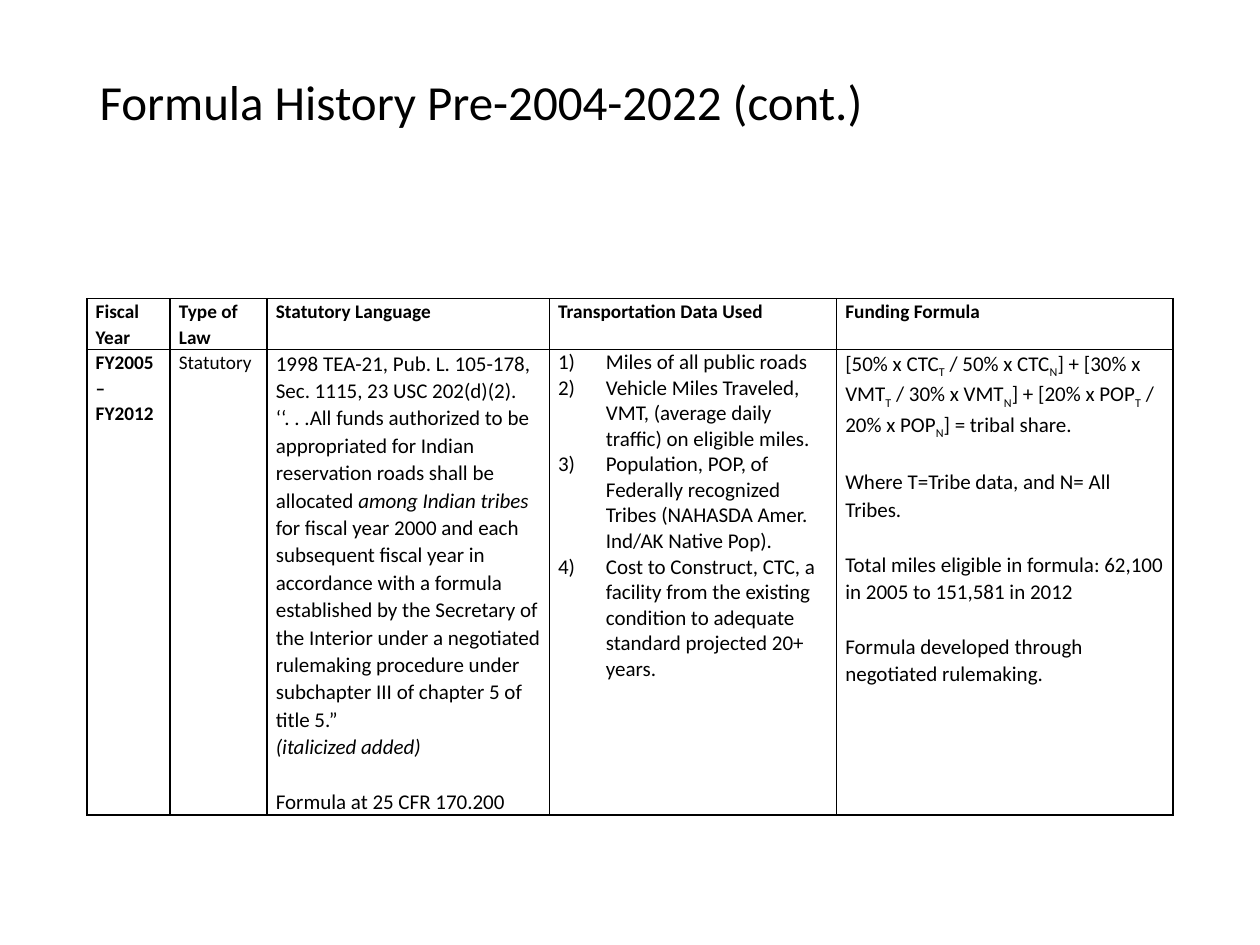
"""Build the slide on formula history with its statutory table."""
from lxml import etree
from pptx import Presentation
from pptx.dml.color import RGBColor
from pptx.enum.text import MSO_ANCHOR, MSO_AUTO_SIZE, PP_ALIGN
from pptx.oxml.ns import qn
from pptx.util import Inches, Pt

BLACK = "000000"
HEADERS = ["Fiscal Year", "Type of Law", "Statutory Language",
           "Transportation Data Used", "Funding Formula"]
COLUMN_WIDTHS = [0.66, 0.77, 2.24, 2.28, 2.67]
ROW_HEIGHTS = [0.37, 3.49]
STATUTE = [
    "1998 TEA-21, Pub. L. 105-178, Sec. 1115, 23 USC 202(d)(2).",
    "‘‘. . .All funds authorized to be appropriated for Indian reservation "
    "roads shall be allocated *among Indian tribes* for fiscal year 2000 and "
    "each subsequent fiscal year in accordance with a formula established by "
    "the Secretary of the Interior under a negotiated rulemaking procedure "
    "under subchapter III of chapter 5 of title 5.”",
    "*(italicized added)*",
    "Formula at 25 CFR 170.200",
]
DATA_USED = [
    "Miles of all public roads",
    "Vehicle Miles Traveled, VMT, (average daily traffic) on eligible miles.",
    "Population, POP, of Federally recognized Tribes (NAHASDA Amer. Ind/AK "
    "Native Pop).",
    "Cost to Construct, CTC, a facility from the existing condition to "
    "adequate standard projected 20+ years.",
]
FORMULA = [
    "[50% x CTC_T_ / 50% x CTC_N_] + [30% x VMT_T_ / 30% x VMT_N_] + "
    "[20% x POP_T_ / 20% x POP_N_] = tribal share.",
    "Where T=Tribe data, and N= All Tribes.",
    "Total miles eligible in formula: 62,100 in 2005 to 151,581 in 2012",
    "Formula developed through negotiated rulemaking.",
]
BODY = [["FY2005 – FY2012"], ["Statutory"], STATUTE, DATA_USED, FORMULA]
GAP_BEFORE = {STATUTE[-1], *FORMULA[1:]}


def style_font(font, size, color, bold=False):
    """Apply the slide typeface with a size, colour and weight."""
    font.name = "Calibri"
    font.size = Pt(size)
    font.bold = bold
    font.color.rgb = RGBColor.from_string(color)


def add_marked_runs(paragraph, text, size, bold):
    """Add runs, with *...* as italic and _..._ as subscript."""
    marker = "*" if "*" in text else "_"
    for index, part in enumerate(text.split(marker)):
        if not part:
            continue
        run = paragraph.add_run()
        run.text = part
        style_font(run.font, size, BLACK, bold)
        if index % 2 and marker == "*":
            run.font.italic = True
        elif index % 2:
            run.font._element.set("baseline", "-25000")


presentation = Presentation()
presentation.slide_width = Inches(10)
presentation.slide_height = Inches(7.5)
slide = presentation.slides.add_slide(presentation.slide_layouts[5])

title = slide.shapes.title
title.left, title.top = Inches(0.69), Inches(0.4)
title.width, title.height = Inches(8.62), Inches(0.86)
title.text_frame.text = "Formula History Pre-2004-2022 (cont.)"
title.text_frame.auto_size = MSO_AUTO_SIZE.NONE
title.text_frame.vertical_anchor = MSO_ANCHOR.MIDDLE
paragraph = title.text_frame.paragraphs[0]
paragraph.alignment = PP_ALIGN.LEFT
paragraph.line_spacing = 0.9
style_font(paragraph.runs[0].font, 28, BLACK)

table = slide.shapes.add_table(
    len(ROW_HEIGHTS), len(COLUMN_WIDTHS), Inches(0.69), Inches(2.37),
    Inches(sum(COLUMN_WIDTHS)), Inches(sum(ROW_HEIGHTS))).table
table.first_row = False
table.horz_banding = False
for column, width in zip(table.columns, COLUMN_WIDTHS):
    column.width = Inches(width)
for row, height in zip(table.rows, ROW_HEIGHTS):
    row.height = Inches(height)

rows = [[[header] for header in HEADERS], BODY]
for row_index, row in enumerate(rows):
    for column_index, texts in enumerate(row):
        cell = table.cell(row_index, column_index)
        cell.margin_left = cell.margin_right = Inches(0.07)
        cell.margin_top = cell.margin_bottom = 0
        cell.fill.background()
        properties = cell._tc.get_or_add_tcPr()
        for position, side in enumerate(["lnL", "lnR", "lnT", "lnB"]):
            line = etree.Element(qn(f"a:{side}"), w=str(Pt(1)))
            fill = etree.SubElement(line, qn("a:solidFill"))
            etree.SubElement(fill, qn("a:srgbClr"), val=BLACK)
            properties.insert(position, line)

        size = 11 if row_index == 0 or column_index < 2 else 12
        bold = row_index == 0 or column_index == 0
        frame = cell.text_frame
        for index, text in enumerate(texts):
            paragraph = frame.add_paragraph() if index else frame.paragraphs[0]
            add_marked_runs(paragraph, text, size, bold)
            if text in GAP_BEFORE:
                paragraph.space_before = Pt(15.7)
            if texts is DATA_USED:
                numbering = paragraph._p.get_or_add_pPr()
                numbering.set("marL", str(Inches(0.38)))
                numbering.set("indent", str(-Inches(0.38)))
                etree.SubElement(numbering, qn("a:buFont"), typeface="+mj-lt")
                etree.SubElement(numbering, qn("a:buAutoNum"), type="arabicParenR")
            else:
                paragraph.line_spacing = 1.07

presentation.save("out.pptx")
